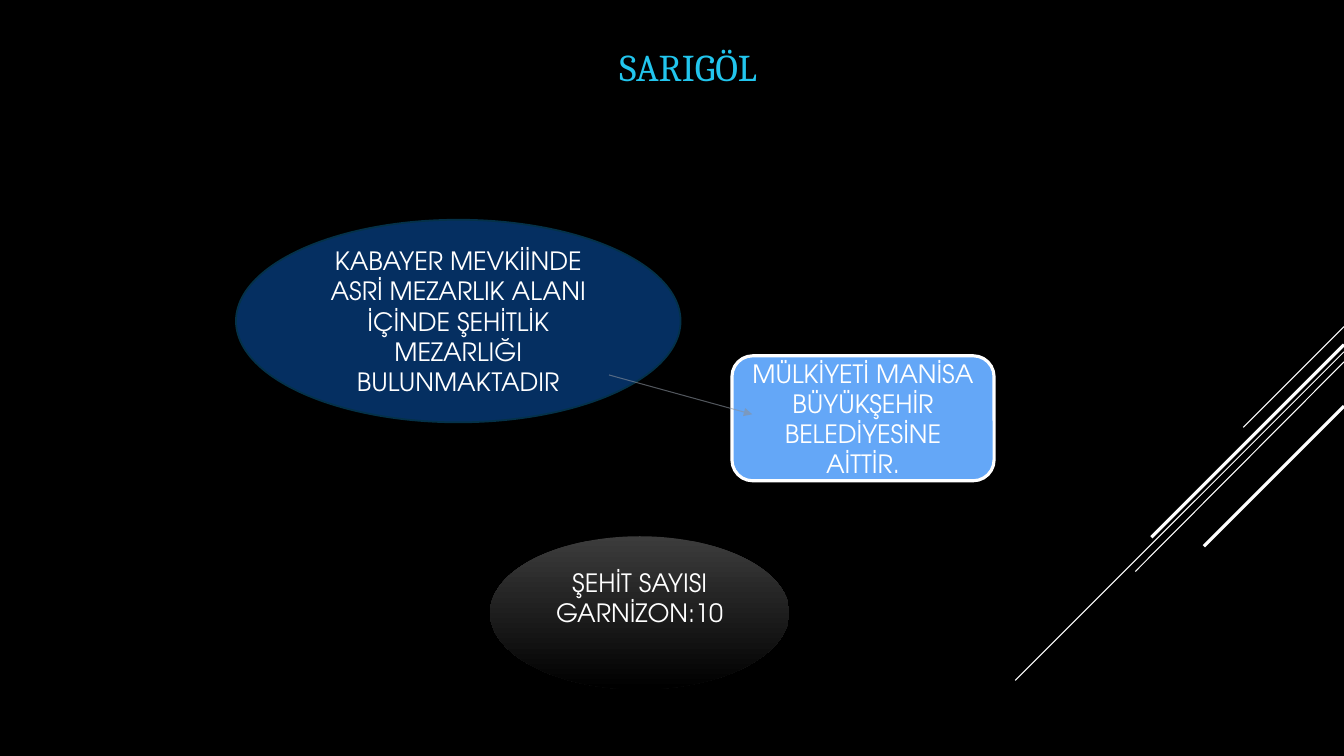
from dataclasses import dataclass

from lxml.etree import SubElement
from pptx import Presentation
from pptx.dml.color import RGBColor
from pptx.enum.shapes import MSO_CONNECTOR, MSO_SHAPE
from pptx.enum.text import MSO_ANCHOR, PP_ALIGN
from pptx.oxml.ns import qn
from pptx.shapes.autoshape import Shape
from pptx.shapes.connector import Connector
from pptx.slide import Slide
from pptx.util import Inches, Pt

COLORS = {
    "background": "000000",
    "white": "FFFFFF",
    "title": "22C5ED",
    "navy": "052F61",
    "navy_edge": "043148",
    "sky": "64A7F7",
    "arrow": "89919C",
    "gradient_top": "3C3C3C",
    "gradient_bottom": "000000",
}
TITLE_FONT = "Cambria"
BODY_FONT = "TeX Gyre Adventor"


@dataclass(frozen=True)
class Line:
    start: tuple[float, float]
    end: tuple[float, float]
    width: float = 0.75
    color: str = "white"


@dataclass(frozen=True)
class Bubble:
    preset: MSO_SHAPE
    box: tuple[float, float, float, float]
    paragraphs: tuple[str, ...]
    fills: tuple[str, ...]
    edge: str = ""
    edge_width: float = 0
    bottom_inset: float = 0.05


STRIPES = (
    Line((13.33, 3.24), (12.33, 4.24)),
    Line((13.33, 3.49), (10.07, 6.75)),
    Line((13.33, 3.59), (11.26, 5.67)),
    Line((13.33, 3.42), (11.42, 5.33), 2.25),
    Line((13.33, 4.03), (11.94, 5.42), 2.25),
)
ARROW = Line((6.04, 3.72), (7.46, 4.11), color="arrow")
LOCATION = Bubble(
    MSO_SHAPE.OVAL, (2.34, 2.18, 4.41, 2.01),
    ("KABAYER MEVKİİNDE ASRİ MEZARLIK ALANI İÇİNDE ŞEHİTLİK MEZARLIĞI BULUNMAKTADIR",),
    ("navy",), "navy_edge", 1.25,
)
OWNERSHIP = Bubble(
    MSO_SHAPE.ROUNDED_RECTANGLE, (7.26, 3.53, 2.6, 1.24),
    ("MÜLKİYETİ MANİSA BÜYÜKŞEHİR BELEDİYESİNE AİTTİR.",),
    ("sky",), "white", 2.25,
)
MARTYR_COUNT = Bubble(
    MSO_SHAPE.OVAL, (4.86, 5.32, 2.97, 1.52),
    ("ŞEHİT SAYISI", "GARNİZON:10"),
    ("gradient_top", "gradient_bottom"), bottom_inset=0.35,
)


def color(name: str) -> RGBColor:
    return RGBColor.from_string(COLORS[name])


def add_line(slide: Slide, line: Line) -> Connector:
    connector = slide.shapes.add_connector(
        MSO_CONNECTOR.STRAIGHT, *map(Inches, line.start + line.end)
    )
    connector.line.color.rgb = color(line.color)
    connector.line.width = Pt(line.width)
    SubElement(connector._element.spPr, qn("a:effectLst"))
    return connector


def add_arrow(slide: Slide, line: Line) -> None:
    outline = add_line(slide, line).line._get_or_add_ln()
    SubElement(outline.find(".//" + qn("a:srgbClr")), qn("a:alpha"), val="60000")
    SubElement(outline, qn("a:tailEnd"), type="triangle")


def write_text(shape: Shape, paragraphs: tuple[str, ...], font: str,
               size: float, color_name: str) -> None:
    frame = shape.text_frame
    frame.word_wrap = True
    for index, text in enumerate(paragraphs):
        paragraph = frame.add_paragraph() if index else frame.paragraphs[0]
        paragraph.alignment = PP_ALIGN.CENTER
        run = paragraph.add_run()
        run.text = text
        run.font.name = font
        run.font.size = Pt(size)
        run.font.color.rgb = color(color_name)


def add_title(slide: Slide, text: str) -> None:
    shape = slide.shapes.add_textbox(*map(Inches, (2.67, 0.31, 8.58, 0.62)))
    write_text(shape, (text,), TITLE_FONT, 27, "title")
    shape.text_frame.vertical_anchor = MSO_ANCHOR.BOTTOM
    shape.text_frame.margin_right = Inches(0.37)


def add_bubble(slide: Slide, bubble: Bubble) -> None:
    shape = slide.shapes.add_shape(bubble.preset, *map(Inches, bubble.box))
    shape.shadow.inherit = False
    if len(bubble.fills) == 1:
        shape.fill.solid()
        shape.fill.fore_color.rgb = color(bubble.fills[0])
    else:
        shape.fill.gradient()
        shape.fill.gradient_angle = 270
        for position, (stop, name) in enumerate(zip(shape.fill.gradient_stops, bubble.fills)):
            stop.position = position
            stop.color.rgb = color(name)
    if bubble.edge:
        shape.line.color.rgb = color(bubble.edge)
        shape.line.width = Pt(bubble.edge_width)
    else:
        shape.line.fill.background()
    write_text(shape, bubble.paragraphs, BODY_FONT, 18, "white")
    shape.text_frame.vertical_anchor = MSO_ANCHOR.MIDDLE
    shape.text_frame.margin_bottom = Inches(bubble.bottom_inset)


def main() -> None:
    presentation = Presentation()
    presentation.slide_width = Inches(13.33)
    presentation.slide_height = Inches(7.5)
    slide = presentation.slides.add_slide(presentation.slide_layouts[6])
    slide.background.fill.solid()
    slide.background.fill.fore_color.rgb = color("background")
    for stripe in STRIPES:
        add_line(slide, stripe)
    add_title(slide, "SARIGÖL")
    add_bubble(slide, LOCATION)
    add_bubble(slide, OWNERSHIP)
    add_arrow(slide, ARROW)
    add_bubble(slide, MARTYR_COUNT)
    presentation.save("out.pptx")


if __name__ == "__main__":
    main()
